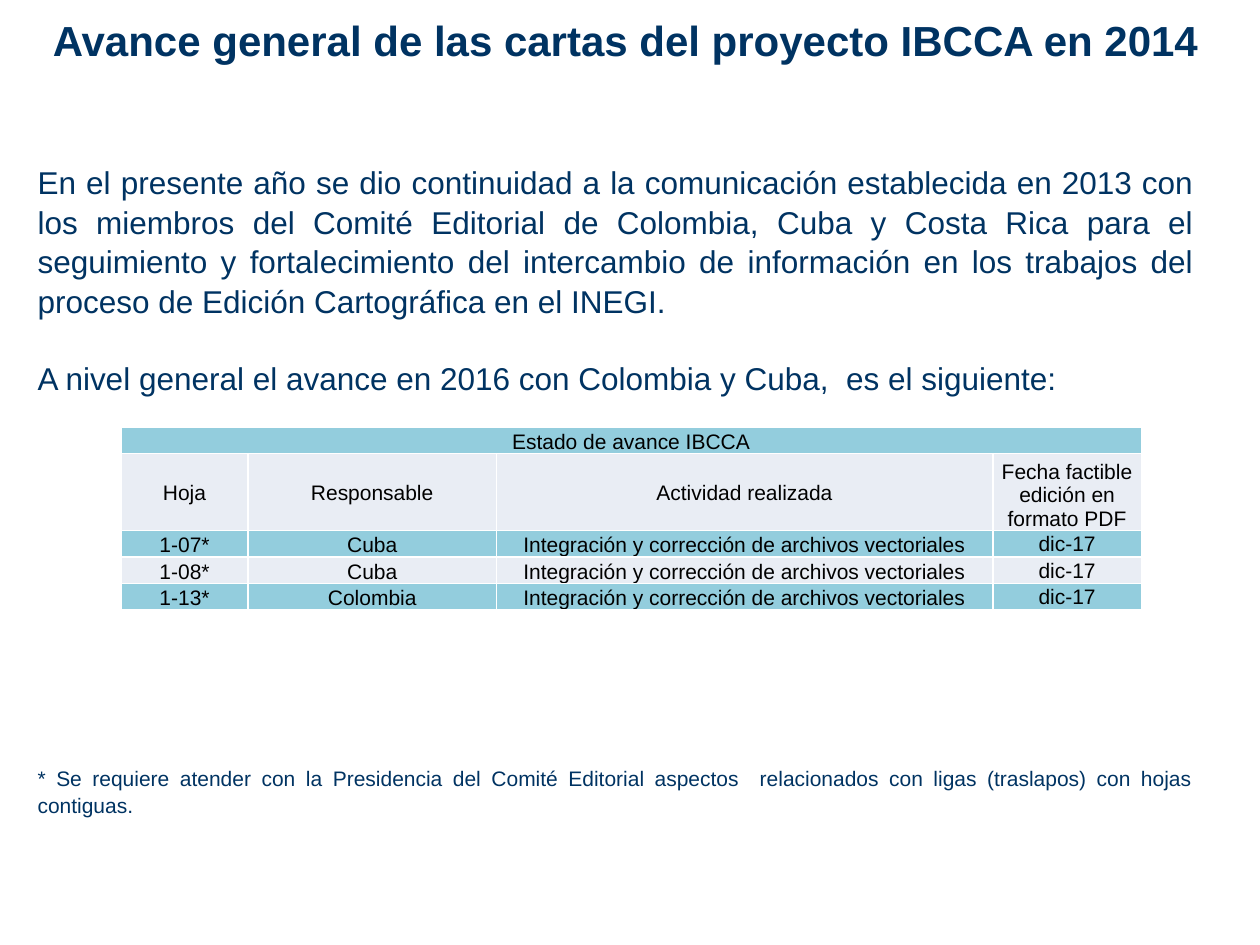
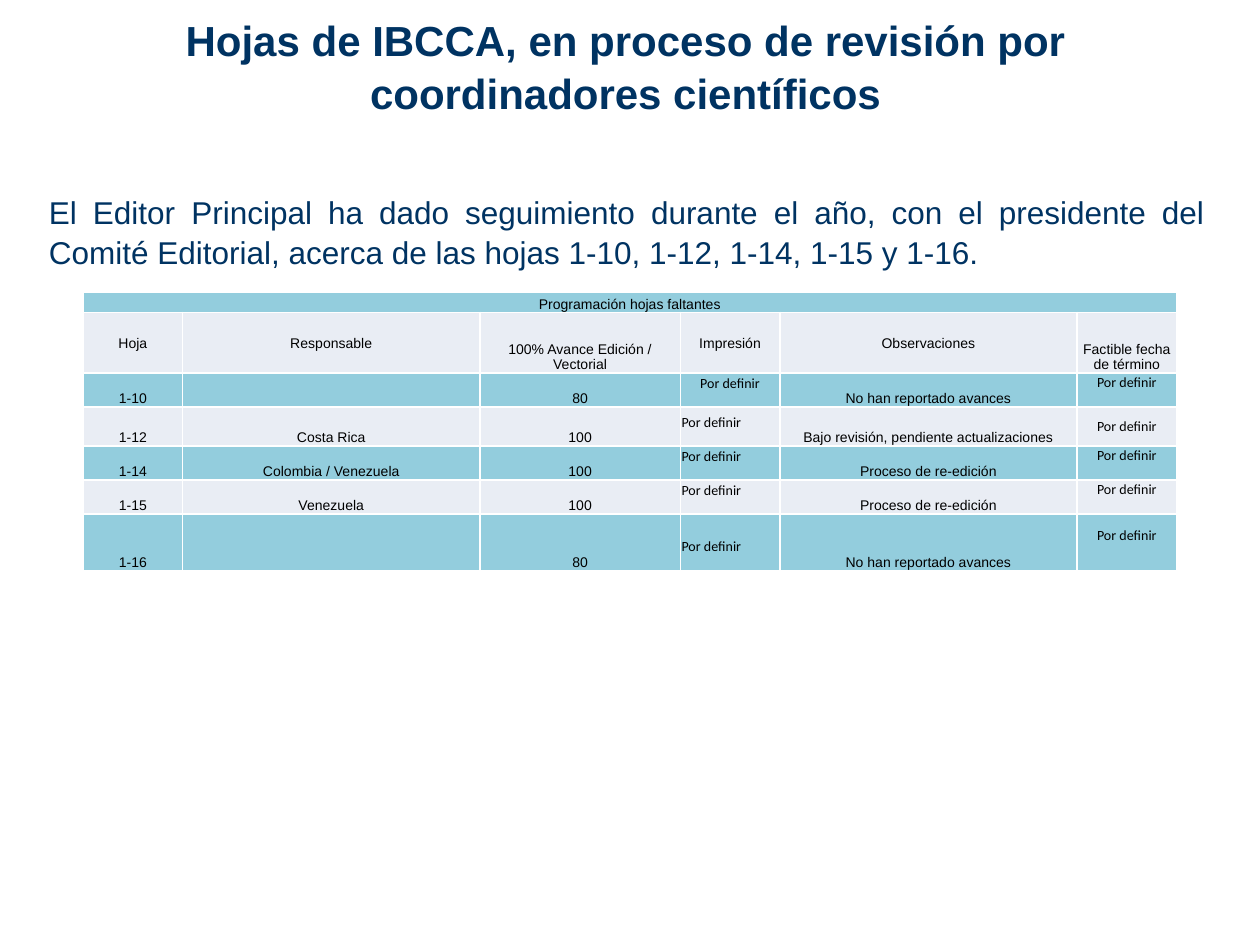
from dataclasses import dataclass

from lxml import etree
from pptx import Presentation
from pptx.dml.color import RGBColor
from pptx.enum.text import MSO_ANCHOR, PP_ALIGN
from pptx.oxml import parse_xml
from pptx.oxml.ns import nsdecls, qn
from pptx.util import Inches, Pt

CENTER, JUSTIFY, LEFT = PP_ALIGN.CENTER, PP_ALIGN.JUSTIFY, PP_ALIGN.LEFT
BOTTOM, MIDDLE = MSO_ANCHOR.BOTTOM, MSO_ANCHOR.MIDDLE


@dataclass(frozen=True)
class Theme:
    """Colours, fonts and type sizes of the deck."""
    navy: str = "003362"
    black: str = "000000"
    white: str = "FFFFFF"
    band: str = "93CDDD"
    pale: str = "E9EDF4"
    font: str = "Arial"
    date_font: str = "Calibri"
    title: int = 24
    body: int = 18
    note: int = 12
    small: int = 8
    leading: float = 1.05
    gap: int = 21
    border: int = 1


@dataclass(frozen=True)
class Entry:
    """Text of a table cell with its formatting."""
    text: str
    anchor: MSO_ANCHOR = BOTTOM
    align: PP_ALIGN = CENTER
    font: str = Theme.font
    inset: float = 0


class Report:
    """Builds slides with one shared style."""

    def __init__(self, theme):
        self.theme = theme
        self.deck = Presentation()
        self.deck.slide_width, self.deck.slide_height = Inches(10), Inches(7.5)
        self.page = None

    def add_page(self, title, height):
        """Start a blank page with its title."""
        self.page = self.deck.slides.add_slide(self.deck.slide_layouts[6])
        self.add_text([title], (0.2, 0.05, 9.53, height), self.theme.title, CENTER, True)

    def add_span(self, para, text, align, color, **font):
        """Put one formatted span into a paragraph."""
        para.alignment = align
        span = para.add_run()
        span.text = text
        for name, value in font.items():
            setattr(span.font, name, value)
        span.font.color.rgb = RGBColor.from_string(color)

    def add_text(self, texts, place, size, align=JUSTIFY, bold=False):
        """Add a wrapped text box with one paragraph per text."""
        frame = self.page.shapes.add_textbox(*map(Inches, place)).text_frame
        frame.word_wrap = True
        for index, text in enumerate(texts):
            para = frame.add_paragraph() if index else frame.paragraphs[0]
            para.line_spacing = self.theme.leading
            if index:
                para.space_before = Pt(self.theme.gap)
            self.add_span(para, text, align, self.theme.navy, size=Pt(size),
                          bold=bold, name=self.theme.font)

    def add_borders(self, cell):
        """Draw the four white edges of a cell."""
        properties = cell._tc.get_or_add_tcPr()
        for side in ("lnL", "lnR", "lnT", "lnB"):
            properties.append(parse_xml(
                f'<a:{side} {nsdecls("a")} w="{Pt(self.theme.border)}"><a:solidFill>'
                f'<a:srgbClr val="{self.theme.white}"/></a:solidFill></a:{side}>'))

    def fill_cell(self, cell, entry, size, fill):
        """Format a cell and set its entry."""
        self.add_borders(cell)
        cell.fill.solid()
        cell.fill.fore_color.rgb = RGBColor.from_string(fill)
        edge = Inches(0.01)
        settings = {"margin_left": edge, "margin_right": edge, "margin_top": edge,
                    "margin_bottom": Inches(entry.inset), "vertical_anchor": entry.anchor}
        for name, value in settings.items():
            setattr(cell, name, value)
        para = cell.text_frame.paragraphs[0]
        if entry.text:
            self.add_span(para, entry.text, entry.align, self.theme.black,
                          size=Pt(size), name=entry.font)
        else:
            etree.SubElement(para._p, qn("a:endParaRPr"), sz=str(size * 100))

    def add_table(self, heading, rows, corner, widths, heights, size):
        """Add a banded table below a merged heading row."""
        place = (*corner, sum(widths), sum(heights))
        table = self.page.shapes.add_table(
            len(heights), len(widths), *map(Inches, place)).table
        table.first_row = table.horz_banding = False
        for column, width in zip(table.columns, widths):
            column.width = Inches(width)
        for row, height in zip(table.rows, heights):
            row.height = Inches(height)
        heading_row = [Entry(heading)] + [Entry("")] * (len(widths) - 1)
        for row_index, entries in enumerate([heading_row, *rows]):
            fill = self.theme.pale if row_index % 2 else self.theme.band
            for column_index, entry in enumerate(entries):
                self.fill_cell(table.cell(row_index, column_index), entry, size, fill)
        table.cell(0, 0).merge(table.cell(0, len(widths) - 1))


def header_row(labels, low_labels):
    """Return header entries, setting the chosen labels at the bottom."""
    return [Entry(label, BOTTOM if label in low_labels else MIDDLE) for label in labels]


def add_progress_page(report):
    """Add the page on the progress of the charts."""
    theme = report.theme
    report.add_page("Avance general de las cartas del proyecto IBCCA en 2014", 0.5)
    report.add_text([
        "En el presente año se dio continuidad a la comunicación establecida en 2013 con "
        "los miembros del Comité Editorial de Colombia, Cuba y Costa Rica para el "
        "seguimiento y fortalecimiento del intercambio de información en los trabajos del "
        "proceso de Edición Cartográfica en el INEGI.",
        "A nivel general el avance en 2016 con Colombia y Cuba,  es el siguiente:",
    ], (0.2, 1.23, 9.37, 1.98), theme.body)
    due = "Fecha factible edición en formato PDF"
    rows = [header_row(["Hoja", "Responsable", "Actividad realizada", due], [due])]
    for sheet, country in (("1-07*", "Cuba"), ("1-08*", "Cuba"), ("1-13*", "Colombia")):
        rows.append([Entry(sheet), Entry(country),
                     Entry("Integración y corrección de archivos vectoriales"),
                     Entry("dic-17", MIDDLE)])
    report.add_table("Estado de avance IBCCA", rows, (0.96, 3.39),
                     [1.01, 1.97, 3.94, 1.18], [0.2, 0.6, 0.21, 0.21, 0.21], theme.note)
    report.add_text([
        "* Se requiere atender con la Presidencia del Comité Editorial aspectos  "
        "relacionados con ligas (traslapos) con hojas contiguas.",
    ], (0.2, 6.02, 9.37, 1.48), theme.note)


def add_review_page(report):
    """Add the page on the sheets under review."""
    theme = report.theme
    report.add_page("Hojas de IBCCA, en proceso de revisión por coordinadores científicos", 0.91)
    progress, due = "100% Avance Edición / Vectorial", "Factible fecha de término"
    rows = [header_row(["Hoja", "Responsable", progress, "Impresión", "Observaciones", due],
                       [progress, due])]
    sheets = [
        ("1-10", "", "80", "No han reportado avances", CENTER, 0.12),
        ("1-12", "Costa Rica", "100", "Bajo revisión, pendiente actualizaciones", LEFT, 0),
        ("1-14", "Colombia / Venezuela", "100", "Proceso de re-edición", LEFT, 0.12),
        ("1-15", "Venezuela", "100", "Proceso de re-edición", LEFT, 0.12),
        ("1-16", "", "80", "No han reportado avances", LEFT, 0.12),
    ]
    for sheet, country, percent, remark, print_align, due_inset in sheets:
        rows.append([
            Entry(sheet), Entry(country), Entry(percent),
            Entry("Por definir", BOTTOM, print_align, theme.date_font, 0.12),
            Entry(remark),
            Entry("Por definir", MIDDLE, CENTER, theme.date_font, due_inset)])
    report.add_table("Programación hojas faltantes", rows, (0.66, 2.32),
                     [0.79, 2.36, 1.59, 0.79, 2.36, 0.79],
                     [0.16, 0.48, 0.27, 0.31, 0.27, 0.27, 0.45], theme.small)
    report.add_text([
        "El Editor Principal ha dado seguimiento durante el año, con el presidente del "
        "Comité Editorial, acerca de las hojas 1-10, 1-12, 1-14, 1-15 y 1-16.",
    ], (0.29, 1.47, 9.37, 0.92), theme.body)


def main():
    """Build and save the deck."""
    report = Report(Theme())
    add_progress_page(report)
    add_review_page(report)
    report.deck.save("out.pptx")


if __name__ == "__main__":
    main()
